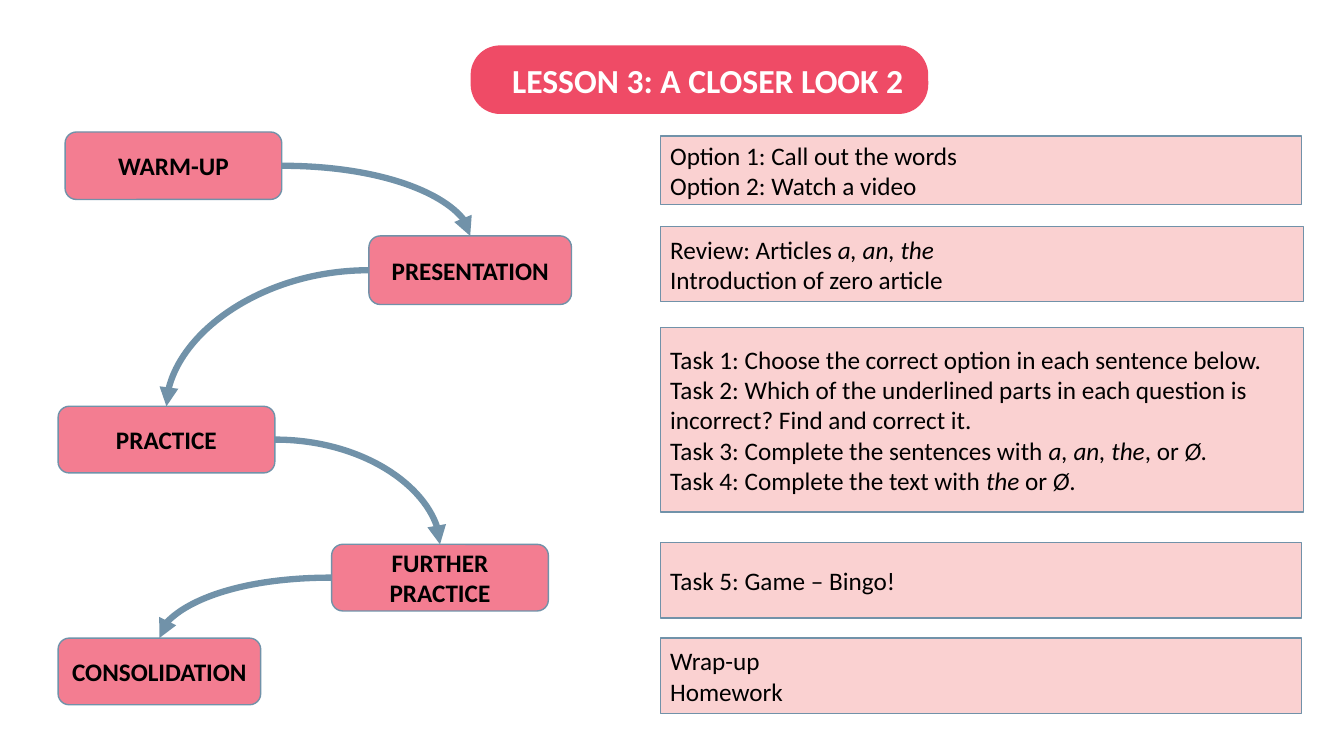
from lxml.etree import SubElement
from pptx import Presentation
from pptx.dml.color import RGBColor
from pptx.enum.shapes import MSO_CONNECTOR, MSO_SHAPE
from pptx.enum.text import MSO_ANCHOR, PP_ALIGN
from pptx.oxml.ns import qn
from pptx.util import Pt

COLORS = {
    "title": "EF4B66",
    "step": "F37D91",
    "panel": "F7A5A5",
    "outline": "7192A9",
    "dark": "000000",
    "light": "FFFFFF",
}
FONT = "Calibri"
TOP_SITE, LEFT_SITE, RIGHT_SITE = 0, 1, 3
PANEL_LEFT = 471.6

STEPS = [
    ("WARM-UP", 46.5, 94.3, 154.8, 48.2),
    ("PRESENTATION", 263.5, 168.5, 144.7, 49),
    ("PRACTICE", 41.5, 290.2, 154.8, 47.6),
    ("FURTHER PRACTICE", 236.9, 388.8, 154.8, 47.6),
    ("CONSOLIDATION", 41.5, 455.8, 144.7, 47.6),
]

PANELS = [
    (97.2, 458, 49, ["Option 1: Call out the words", "Option 2: Watch a video"]),
    (162, 459.4, 53.6, ["Review: Articles *a, an, the*", "Introduction of zero article"]),
    (234, 459.4, 131.8, [
        "Task 1: Choose the correct option in each sentence below.",
        "Task 2: Which of the underlined parts in each question is incorrect? Find and correct it.",
        "Task 3: Complete the sentences with *a, an, the*, or *Ø.*",
        "Task 4: Complete the text with *the* or *Ø*.",
    ]),
    (387.4, 458, 54, ["Task 5: Game – Bingo!"]),
    (455.8, 458, 54, ["Wrap-up", "Homework"]),
]


def color(name):
    return RGBColor.from_string(COLORS[name])


def add_box(page, kind, left, top, width, height, fill, outlined=True):
    box = page.shapes.add_shape(kind, Pt(left), Pt(top), Pt(width), Pt(height))
    box.shadow.inherit = False
    box.fill.solid()
    box.fill.fore_color.rgb = color(fill)
    if outlined:
        box.line.color.rgb = color("outline")
        box.line.width = Pt(1)
    else:
        box.line.fill.background()
    return box


def write_lines(box, lines, size=18, ink="dark", bold=False, align=PP_ALIGN.LEFT):
    frame = box.text_frame
    frame.word_wrap = True
    frame.vertical_anchor = MSO_ANCHOR.MIDDLE
    for index, line in enumerate(lines):
        para = frame.paragraphs[0] if index == 0 else frame.add_paragraph()
        para.alignment = align
        for position, text in enumerate(line.split("*")):
            if text:
                span = para.add_run()
                span.text = text
                span.font.name = FONT
                span.font.size = Pt(size)
                span.font.bold = bold
                span.font.italic = position % 2 == 1
                span.font.color.rgb = color(ink)


def add_title(page):
    box = add_box(page, MSO_SHAPE.ROUNDED_RECTANGLE, 336.2, 32.4, 326.9, 49, "title", False)
    box.adjustments[0] = 0.43
    box.text_frame.margin_left = Pt(23.5)
    write_lines(box, ["LESSON 3: A CLOSER LOOK 2"], 24, "light", True)


def add_step(page, label, left, top, width, height):
    box = add_box(page, MSO_SHAPE.ROUNDED_RECTANGLE, left, top, width, height, "step")
    write_lines(box, [label], bold=True, align=PP_ALIGN.CENTER)
    return box


def add_panel(page, top, width, height, lines):
    box = add_box(page, MSO_SHAPE.RECTANGLE, PANEL_LEFT, top, width, height, "panel")
    tint = box.fill._xPr.find(qn("a:solidFill"))[0]
    SubElement(tint, qn("a:alpha"), val="50000")
    write_lines(box, lines)


def add_arrow(page, source, target):
    side = RIGHT_SITE if source.left < target.left else LEFT_SITE
    arrow = page.shapes.add_connector(MSO_CONNECTOR.CURVE, 0, 0, 0, 0)
    arrow.begin_connect(source, side)
    arrow.end_connect(target, TOP_SITE)
    arrow.line.color.rgb = color("outline")
    arrow.line.width = Pt(4.5)
    properties = arrow._element.spPr
    properties.find(qn("a:prstGeom")).set("prst", "curvedConnector2")
    SubElement(properties.find(qn("a:ln")), qn("a:tailEnd"), type="triangle")
    SubElement(properties, qn("a:effectLst"))


def main():
    deck = Presentation()
    deck.slide_width, deck.slide_height = Pt(960), Pt(540)
    page = deck.slides.add_slide(deck.slide_layouts[6])
    add_title(page)
    steps = [add_step(page, *step) for step in STEPS]
    for source, target in zip(steps, steps[1:]):
        add_arrow(page, source, target)
    for panel in PANELS:
        add_panel(page, *panel)
    deck.save("out.pptx")


if __name__ == "__main__":
    main()
